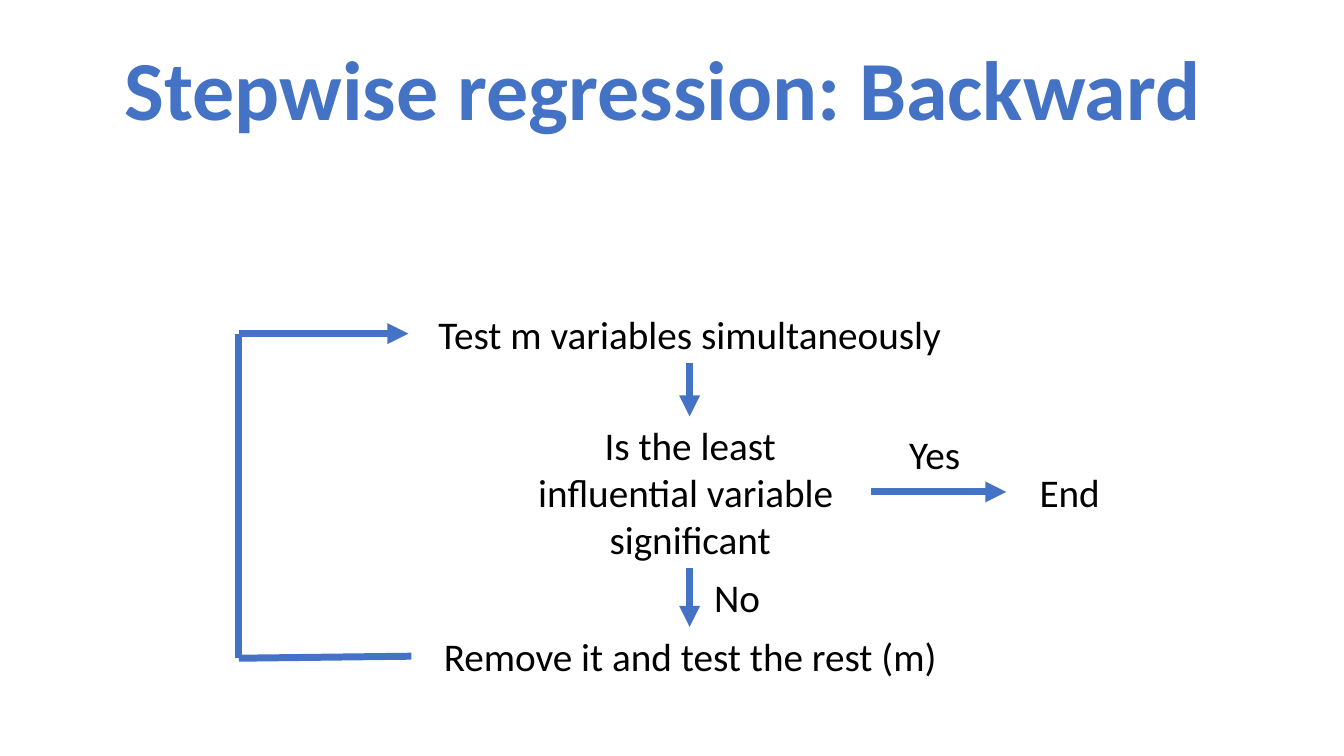
from dataclasses import dataclass

import pptx
import pptx.dml.color
import pptx.enum.shapes
import pptx.enum.text
import pptx.oxml
import pptx.oxml.ns
import pptx.slide
import pptx.text.text
import pptx.util
from pptx.util import Inches


@dataclass(frozen=True)
class Theme:
    font: str = "Calibri"
    accent: str = "4472C4"
    ink: str = "000000"
    title_size: int = 60
    label_size: int = 28
    line_width: int = 5


@dataclass(frozen=True)
class Label:
    text: str
    left: float
    top: float
    width: float
    height: float = 0.57


@dataclass(frozen=True)
class Link:
    start: tuple[float, float]
    end: tuple[float, float]
    arrow: bool = True


THEME = Theme()
TITLE = "Stepwise regression: Backward "

AXIS = 6.84  # centre of the vertical flow
LOOP = 2.37  # left side of the feedback loop
TEST_Y, YES_Y, LOOP_Y = 3.31, 4.88, 6.53

LABELS = [
    Label("Test m variables simultaneously", 4.05, 3.03, 5.58),
    Label("Is the least\ninfluential variable \nsignificant", 5.05, 4.13, 3.59, 1.51),
    Label("Remove it and test the rest (m)", 4.08, 6.22, 5.53),
    Label("End", 9.98, 4.6, 1.26),
    Label("Yes", 8.64, 4.22, 1.26),
    Label("No", 6.68, 5.64, 1.26),
]

LINKS = [
    Link((AXIS, 3.6), (AXIS, 4.13)),
    Link((AXIS, 5.64), (AXIS, 6.22)),
    Link((8.64, YES_Y), (9.98, YES_Y)),
    Link((LOOP, TEST_Y), (4.05, TEST_Y)),
    Link((LOOP, LOOP_Y), (LOOP, TEST_Y), arrow=False),
    Link((LOOP, LOOP_Y), (4.08, 6.51), arrow=False),
]


def format_text(frame: pptx.text.text.TextFrame, size: int, color: str,
                bold: bool = False) -> None:
    for para in frame.paragraphs:
        para.alignment = pptx.enum.text.PP_ALIGN.CENTER
        for span in para.runs:
            span.font.name = THEME.font
            span.font.size = pptx.util.Pt(size)
            span.font.bold = bold
            span.font.color.rgb = pptx.dml.color.RGBColor.from_string(color)


def add_title(page: pptx.slide.Slide) -> None:
    title = page.shapes.title
    title.left, title.top = Inches(0.92), Inches(0)
    title.width, title.height = Inches(11.5), Inches(1.85)
    frame = title.text_frame
    frame.text = TITLE
    frame.word_wrap = True
    frame.auto_size = pptx.enum.text.MSO_AUTO_SIZE.NONE
    frame.vertical_anchor = pptx.enum.text.MSO_ANCHOR.MIDDLE
    frame.paragraphs[0].line_spacing = 0.9
    format_text(frame, THEME.title_size, THEME.accent, bold=True)


def add_label(page: pptx.slide.Slide, label: Label) -> None:
    box = page.shapes.add_textbox(Inches(label.left), Inches(label.top),
                                  Inches(label.width), Inches(label.height))
    frame = box.text_frame
    frame.text = label.text
    frame.word_wrap = True
    frame.auto_size = pptx.enum.text.MSO_AUTO_SIZE.SHAPE_TO_FIT_TEXT
    format_text(frame, THEME.label_size, THEME.ink)


def add_link(page: pptx.slide.Slide, link: Link) -> None:
    line = page.shapes.add_connector(
        pptx.enum.shapes.MSO_CONNECTOR.STRAIGHT,
        *map(Inches, link.start), *map(Inches, link.end))
    line.line.color.rgb = pptx.dml.color.RGBColor.from_string(THEME.accent)
    line.line.width = pptx.util.Pt(THEME.line_width)
    if link.arrow:
        head = pptx.oxml.parse_xml(
            f'<a:tailEnd {pptx.oxml.ns.nsdecls("a")} type="triangle"/>')
        line.line._get_or_add_ln().append(head)
    line._element.spPr.append(
        pptx.oxml.parse_xml(f'<a:effectLst {pptx.oxml.ns.nsdecls("a")}/>'))


def main() -> None:
    deck = pptx.Presentation()
    deck.slide_width, deck.slide_height = Inches(13.33), Inches(7.5)
    page = deck.slides.add_slide(deck.slide_layouts.get_by_name("Title Only"))
    add_title(page)
    for label in LABELS:
        add_label(page, label)
    for link in LINKS:
        add_link(page, link)
    deck.save("out.pptx")


if __name__ == "__main__":
    main()
